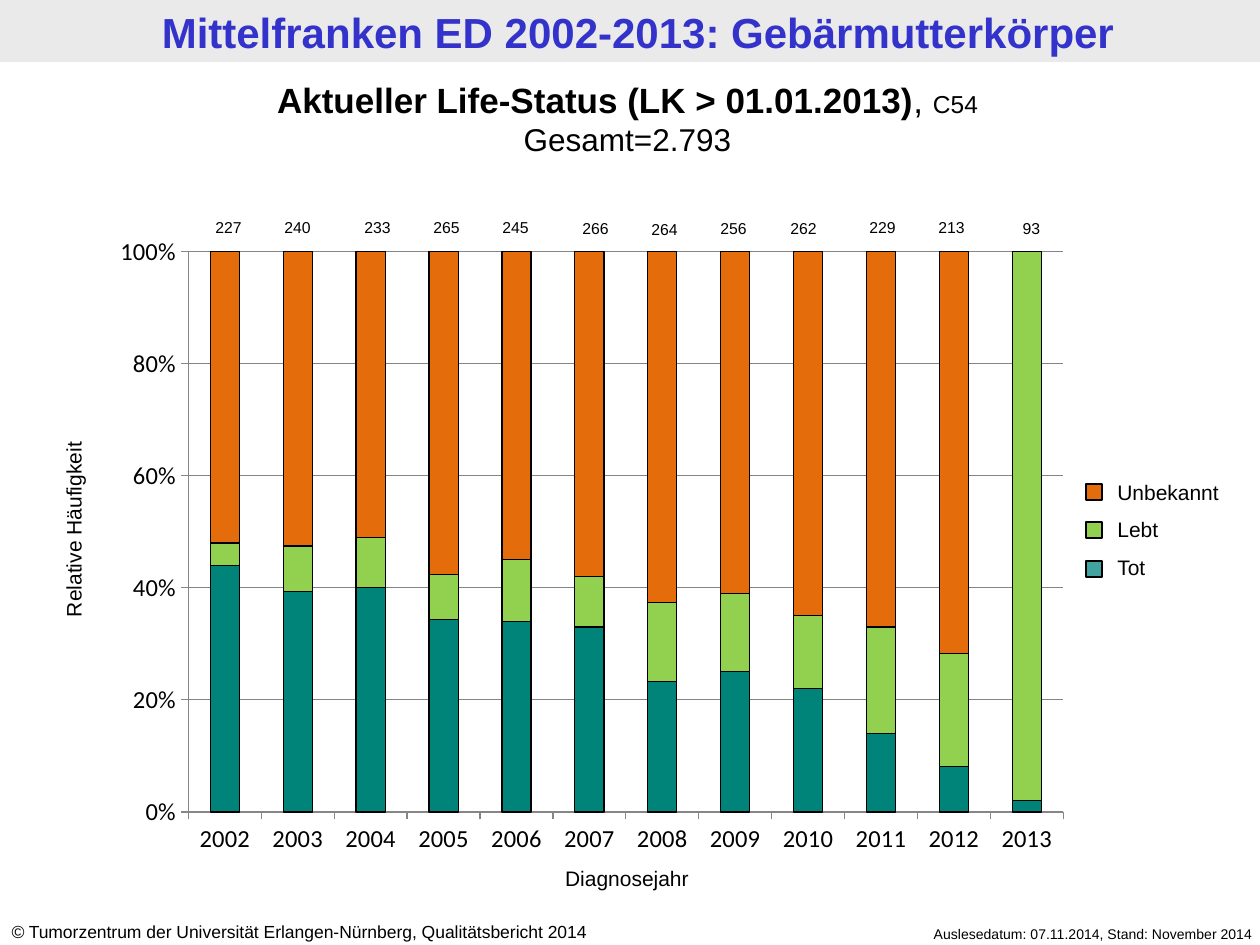
from dataclasses import dataclass

from lxml import etree
from pptx import Presentation
from pptx import util as u
from pptx.chart import data as chart_data
from pptx.dml import color
from pptx.enum import chart as ch, shapes, text
from pptx.oxml import ns, parse_xml

PX_PER_INCH = 126


@dataclass(frozen=True)
class Theme:
    banner: str = "EAEAEA"
    title: str = "3333CC"
    ink: str = "000000"
    grid: str = "868686"
    dead: str = "008378"
    dead_key: str = "008380"
    alive: str = "92D050"
    unknown: str = "E46C0A"
    font: str = "Arial"
    chart_font: str = "Calibri"
    title_pt: int = 24
    heading_pt: int = 20
    total_pt: int = 18
    code_pt: int = 14
    axis_pt: int = 14
    label_pt: int = 12
    source_pt: int = 10
    count_pt: int = 9
    date_pt: int = 8
    line_pt: float = 0.75


THEME = Theme()


@dataclass(frozen=True)
class Box:
    left: int
    top: int
    width: int
    height: int

    def emu(self) -> list[int]:
        return [px(n) for n in (self.left, self.top, self.width, self.height)]


@dataclass(frozen=True)
class Run:
    words: str
    size: int
    bold: bool = False
    italic: bool = False
    ink: str = THEME.ink


@dataclass(frozen=True)
class Count:
    year: int
    cases: int
    left: int
    top: int = 212


@dataclass(frozen=True)
class Status:
    name: str
    shares: tuple[int, ...]
    fill: str
    key_fill: str
    key_top: int
    key_alpha: int = 100


COUNTS = (
    Count(2002, 227, 194), Count(2003, 240, 263), Count(2004, 233, 343),
    Count(2005, 265, 412), Count(2006, 245, 481), Count(2007, 266, 561, 213),
    Count(2008, 264, 630, 214), Count(2009, 256, 699, 213),
    Count(2010, 262, 769, 213), Count(2011, 229, 848),
    Count(2012, 213, 917), Count(2013, 93, 997, 213),
)
STATUSES = (  # bottom of the stack first
    Status("Tot", (44, 39, 40, 34, 34, 33, 23, 25, 22, 14, 8, 2),
           THEME.dead, THEME.dead_key, 561, 74),
    Status("Lebt", (4, 8, 9, 8, 11, 9, 14, 14, 13, 19, 20, 98),
           THEME.alive, THEME.alive, 522),
    Status("Unbekannt", (52, 52, 51, 57, 55, 58, 62, 61, 65, 67, 71, 0),
           THEME.unknown, THEME.unknown, 484),
)


def px(n: int) -> int:
    return u.Inches(n / PX_PER_INCH)


def rgb(value: str) -> color.RGBColor:
    return color.RGBColor.from_string(value)


def apply(target, values: dict) -> None:
    for name, value in values.items():
        setattr(target, name, value)


def paint(part, fill: str) -> None:
    part.fill.solid()
    part.fill.fore_color.rgb = rgb(fill)


def outline(line, ink: str) -> None:
    line.color.rgb = rgb(ink)
    line.width = u.Pt(THEME.line_pt)


def add_words(slide, box: Box, *lines: list[Run], align=text.PP_ALIGN.CENTER,
              rotation: int = 0, gap: int = 0) -> None:
    holder = slide.shapes.add_textbox(*box.emu())
    holder.rotation = rotation
    frame = holder.text_frame
    frame.word_wrap = True
    for i, runs in enumerate(lines):
        paragraph = frame.paragraphs[0] if i == 0 else frame.add_paragraph()
        paragraph.alignment = align
        if i and gap:
            paragraph.space_before = u.Pt(gap)
        for run in runs:
            piece = paragraph.add_run()
            piece.text = run.words
            apply(piece.font, {"name": THEME.font, "size": u.Pt(run.size),
                               "bold": run.bold, "italic": run.italic})
            piece.font.color.rgb = rgb(run.ink)


def add_block(slide, box: Box, fill: str, alpha: int = 100):
    block = slide.shapes.add_shape(shapes.MSO_SHAPE.RECTANGLE, *box.emu())
    block.shadow.inherit = False
    paint(block, fill)
    block.line.fill.background()
    if alpha < 100:
        tint = block.fill._xPr.find(".//" + ns.qn("a:srgbClr"))
        etree.SubElement(tint, ns.qn("a:alpha"), val=str(alpha * 1000))
    return block


def add_status_chart(slide, box: Box) -> None:
    table = chart_data.CategoryChartData()
    table.categories = [str(count.year) for count in COUNTS]
    for status in STATUSES:
        table.add_series(status.name, status.shares)
    chart = slide.shapes.add_chart(
        ch.XL_CHART_TYPE.COLUMN_STACKED_100, *box.emu(), table).chart
    apply(chart, {"has_legend": False, "has_title": False})
    apply(chart.font, {"name": THEME.chart_font, "size": u.Pt(THEME.axis_pt)})
    chart.font.color.rgb = rgb(THEME.ink)

    # Columns
    plot = chart.plots[0]
    apply(plot, {"gap_width": 150, "overlap": 100, "vary_by_categories": False})
    for series, status in zip(plot.series, STATUSES):
        paint(series.format, status.fill)
        outline(series.format.line, THEME.ink)

    # Axes
    shares = chart.value_axis
    apply(shares, {"minimum_scale": 0, "maximum_scale": 1, "major_unit": 0.2,
                   "has_major_gridlines": True})
    apply(shares.tick_labels, {"number_format": "0%",
                               "number_format_is_linked": False})
    outline(shares.major_gridlines.format.line, THEME.grid)
    for axis in (shares, chart.category_axis):
        axis.major_tick_mark = ch.XL_TICK_MARK.OUTSIDE
        outline(axis.format.line, THEME.grid)

    # Fixed inner plot area, as fractions of the chart
    area = {"x": 0.09, "y": 0.04, "w": 0.89, "h": 0.87}
    places = "".join(f'<c:{k} val="{v}"/>' for k, v in area.items())
    layout = parse_xml(
        f'<c:layout {ns.nsdecls("c")}><c:manualLayout>'
        '<c:layoutTarget val="inner"/><c:xMode val="edge"/>'
        f'<c:yMode val="edge"/>{places}</c:manualLayout></c:layout>')
    plot_area = chart._chartSpace.chart.plotArea
    for old in plot_area.findall(ns.qn("c:layout")):
        plot_area.remove(old)
    plot_area.insert(0, layout)


def main() -> None:
    deck = Presentation()
    apply(deck, {"slide_width": px(1260), "slide_height": px(945)})
    slide = deck.slides.add_slide(deck.slide_layouts[6])
    t = THEME

    # Banner and footer
    add_block(slide, Box(0, 0, 1260, 62), t.banner)
    add_words(slide, Box(8, 0, 1260, 62),
              [Run("Mittelfranken ED 2002-2013: Gebärmutterkörper",
                   t.title_pt, bold=True, ink=t.title)])
    add_words(slide, Box(838, 919, 427, 30),
              [Run("Auslesedatum: 07.11.2014, Stand: November 2014", t.date_pt)],
              align=text.PP_ALIGN.RIGHT)
    add_words(slide, Box(-1, 915, 660, 34),
              [Run("©", t.source_pt, italic=True),
               Run(" Tumorzentrum der Universität Erlangen-Nürnberg, "
                   "Qualitätsbericht 2014", t.source_pt)],
              align=text.PP_ALIGN.LEFT)

    # Chart with axis titles and heading
    add_status_chart(slide, Box(100, 226, 983, 644))
    add_words(slide, Box(-78, 510, 304, 39),
              [Run("Relative Häufigkeit", t.label_pt)], rotation=270)
    add_words(slide, Box(485, 859, 284, 39), [Run("Diagnosejahr", t.label_pt)])
    add_words(slide, Box(-5, 72, 1265, 93),
              [Run("Aktueller Life-Status (LK > 01.01.2013)", t.heading_pt, bold=True),
               Run(", ", t.heading_pt), Run("C54", t.code_pt)],
              [Run("Gesamt=2.793", t.total_pt)])

    # Case counts above the columns
    for count in COUNTS:
        add_words(slide, Box(count.left, count.top, 69, 32),
                  [Run(str(count.cases), t.count_pt)])

    # Legend, top of the stack first
    add_words(slide, Box(1105, 473, 155, 115),
              *([Run(status.name, t.label_pt)] for status in reversed(STATUSES)),
              align=text.PP_ALIGN.LEFT, gap=7)
    for status in STATUSES:
        key = add_block(slide, Box(1086, status.key_top, 16, 16),
                        status.key_fill, status.key_alpha)
        outline(key.line, t.ink)

    deck.save("out.pptx")


if __name__ == "__main__":
    main()
